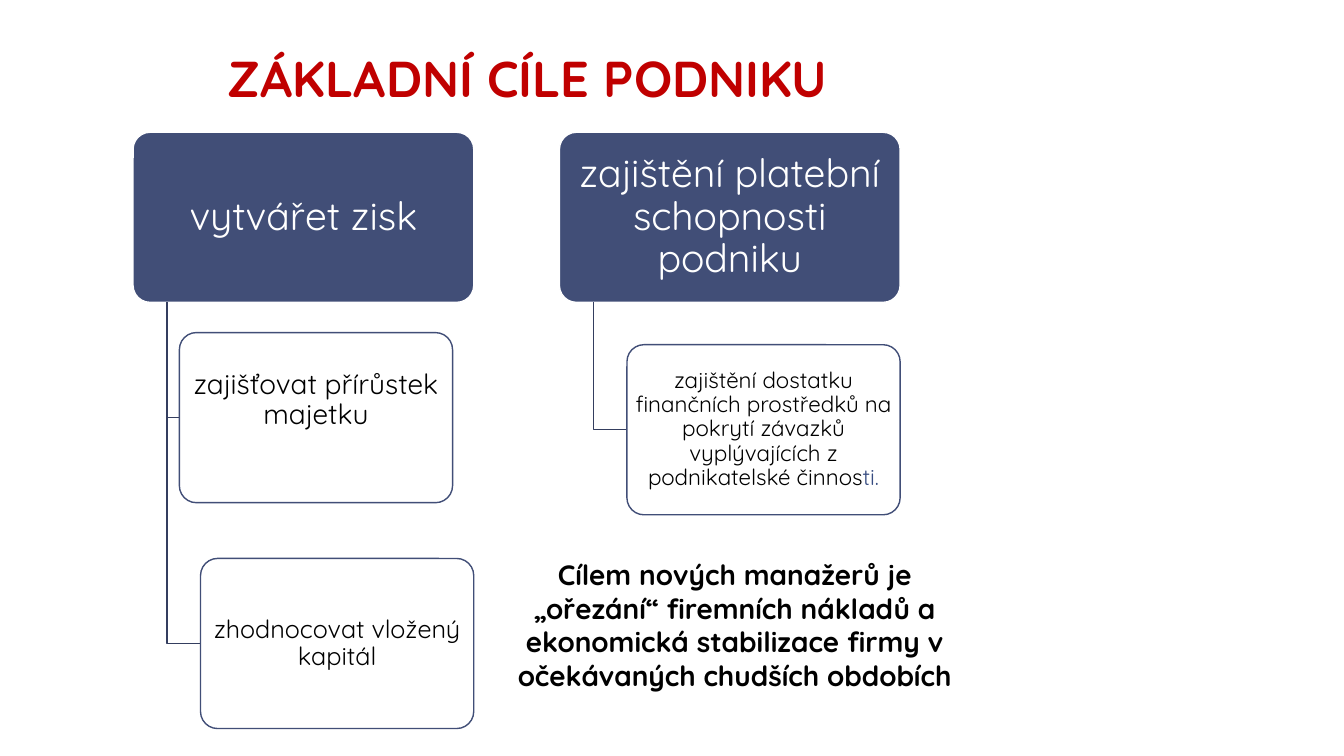
from lxml import etree
from pptx import Presentation
from pptx.dml.color import RGBColor
from pptx.enum.shapes import MSO_SHAPE
from pptx.enum.text import MSO_ANCHOR, PP_ALIGN
from pptx.oxml.ns import qn
from pptx.util import Inches, Pt

ROUNDED = MSO_SHAPE.ROUNDED_RECTANGLE
CENTER = PP_ALIGN.CENTER
MIDDLE, TOP, BOTTOM = MSO_ANCHOR.MIDDLE, MSO_ANCHOR.TOP, MSO_ANCHOR.BOTTOM

RED = RGBColor(0xC0, 0x00, 0x00)
NAVY = RGBColor(0x41, 0x4E, 0x77)
BRANCH_NAVY = RGBColor(0x34, 0x3E, 0x5F)
ACCENT = RGBColor(0x37, 0x4C, 0x81)
WHITE = RGBColor(0xFF, 0xFF, 0xFF)
BLACK = RGBColor(0x00, 0x00, 0x00)

FONT = "Quicksand"
GRID = 40
GOAL_TOP, BOX_ROWS = 7, 9
GOAL_COLUMNS, STEP_COLUMNS = 10.14, 8.13

GOALS = [
    (3.96, "vytvářet zisk", [
        (5.34, 17.6, 20, (0.04, 0.03, 0.04, 0.37),
         ["zajišťovat přírůstek majetku"]),
        (5.97, 29.55, 18, (0.04, 0.03, 0.04, 0.03),
         ["zhodnocovat vložený kapitál"]),
    ]),
    (16.65, "zajištění platební schopnosti podniku", [
        (18.66, 18.24, 16, (0.03, 0.02, 0.03, 0.02),
         ["zajištění dostatku finančních prostředků na pokrytí závazků "
          "vyplývajících z podnikatelské činnos", "ti."]),
    ]),
]


class GoalSlide:
    """Draws goal-tree elements on a slide, measured in grid columns and rows."""

    def __init__(self, presentation):
        self.slide = presentation.slides.add_slide(presentation.slide_layouts[6])
        self.column = presentation.slide_width / GRID
        self.row = presentation.slide_height / GRID

    def place(self, left, top, width, height):
        return (round(left * self.column), round(top * self.row),
                round(width * self.column), round(height * self.row))

    def fill_text(self, shape, parts, size, color, bold, anchor, margins, spacing):
        frame = shape.text_frame
        frame.word_wrap = True
        frame.vertical_anchor = anchor
        (frame.margin_left, frame.margin_top,
         frame.margin_right, frame.margin_bottom) = map(Inches, margins)
        paragraph = frame.paragraphs[0]
        paragraph.alignment = CENTER
        paragraph.line_spacing = spacing
        for index, part in enumerate(parts):
            run = paragraph.add_run()
            run.text = part
            run.font.name = FONT
            run.font.size = Pt(size)
            run.font.bold = bold
            run.font.color.rgb = ACCENT if index else color

    def text(self, area, text, size, color, anchor, margins, spacing):
        box = self.slide.shapes.add_textbox(*self.place(*area))
        self.fill_text(box, [text], size, color, True, anchor, margins, spacing)

    def box(self, area, parts, size, color, fill, line, margins, opacity=100):
        shape = self.slide.shapes.add_shape(ROUNDED, *self.place(*area))
        shape.adjustments[0] = 0.1
        shape.shadow.inherit = False
        shape.fill.solid()
        shape.fill.fore_color.rgb = fill
        if opacity < 100:
            fill_color = shape.element.spPr.find(qn("a:solidFill"))[0]
            etree.SubElement(fill_color, qn("a:alpha"), val=str(opacity * 1000))
        shape.line.color.rgb = line
        shape.line.width = Pt(1)
        self.fill_text(shape, parts, size, color, False, MIDDLE, margins, 0.9)

    def branch(self, trunk, top, left, middle):
        corners = [self.place(column, row, 0, 0)[:2] for column, row in
                   [(trunk, top), (trunk, middle), (left, middle)]]
        builder = self.slide.shapes.build_freeform(*corners[0])
        builder.add_line_segments(corners[1:], close=False)
        shape = builder.convert_to_shape()
        shape.shadow.inherit = False
        shape.fill.background()
        shape.line.color.rgb = BRANCH_NAVY
        shape.line.width = Pt(1)

    def goal(self, left, title, steps):
        self.box((left, GOAL_TOP, GOAL_COLUMNS, BOX_ROWS), [title], 28,
                 WHITE, NAVY, WHITE, (0.06, 0.04, 0.06, 0.04))
        trunk = left + GOAL_COLUMNS / 10
        for step_left, step_top, size, margins, parts in steps:
            self.branch(trunk, GOAL_TOP + BOX_ROWS, step_left,
                        step_top + BOX_ROWS / 2)
            self.box((step_left, step_top, STEP_COLUMNS, BOX_ROWS), parts, size,
                     BLACK, WHITE, NAVY, margins, 90)


def main():
    presentation = Presentation()
    presentation.slide_width = Inches(13.33)
    presentation.slide_height = Inches(7.5)
    slide = GoalSlide(presentation)
    slide.text((4.2, 0, 23, 6.13), "ZÁKLADNÍ CÍLE PODNIKU", 36, RED,
               BOTTOM, (0.13, 0.07, 0.13, 0.07), 0.95)
    for goal in GOALS:
        slide.goal(*goal)
    slide.text((14.55, 29.23, 14.64, 7.73),
               "Cílem nových manažerů je „ořezání“ firemních nákladů a "
               "ekonomická stabilizace firmy v očekávaných chudších obdobích",
               20, BLACK, TOP, (0.1, 0.05, 0.1, 0.05), 1.0)
    presentation.save("out.pptx")


if __name__ == "__main__":
    main()
